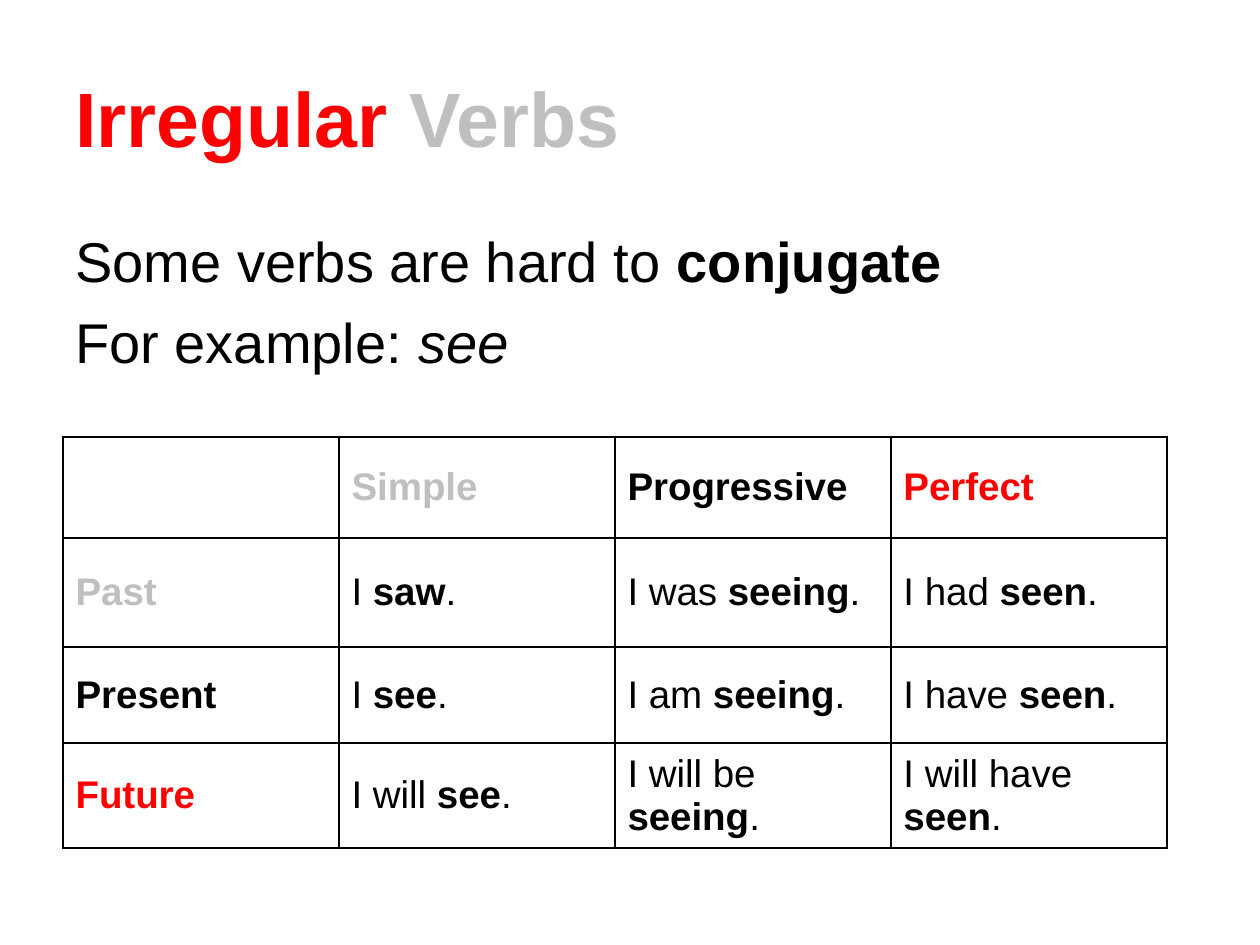
"""Build a slide on irregular verbs with a conjugation table for "see"."""
from lxml import etree
from pptx import Presentation
from pptx.dml.color import RGBColor
from pptx.enum.text import MSO_ANCHOR
from pptx.oxml.ns import qn
from pptx.util import Emu, Pt

PX = 914400 / 126
RED = RGBColor(0xFF, 0x00, 0x00)
GRAY = RGBColor(0xBF, 0xBF, 0xBF)
BLACK = RGBColor(0x00, 0x00, 0x00)


def px(*lengths):
    return [Emu(round(length * PX)) for length in lengths]


def write_runs(paragraph, size, runs):
    for text, color, bold, italic in runs:
        run = paragraph.add_run()
        run.text = text
        run.font.name = "Arial"
        run.font.size = Pt(size)
        run.font.color.rgb = color
        run.font.bold = bold
        run.font.italic = italic


presentation = Presentation()
presentation.slide_width, presentation.slide_height = px(1260, 945)
slide = presentation.slides.add_slide(presentation.slide_layouts[6])

title = slide.shapes.add_textbox(*px(63, 38, 1134, 158)).text_frame
title.word_wrap = True
title.vertical_anchor = MSO_ANCHOR.MIDDLE
write_runs(title.paragraphs[0], 44, [("Irregular ", RED, True, False), ("Verbs", GRAY, True, False)])

body = slide.shapes.add_textbox(*px(63, 220, 1134, 624)).text_frame
body.word_wrap = True
introduction = body.paragraphs[0]
introduction.space_before = Pt(3)
write_runs(introduction, 32, [("Some verbs are hard to ", BLACK, False, False), ("conjugate", BLACK, True, False)])
example = body.add_paragraph()
example.space_before = Pt(8)
write_runs(example, 32, [("For example: ", BLACK, False, False), ("see", BLACK, False, True)])

aspects = [("Simple", GRAY), ("Progressive", BLACK), ("Perfect", RED)]
tenses = [
    ("Past", GRAY, [("I ", "saw"), ("I was ", "seeing"), ("I had ", "seen")]),
    ("Present", BLACK, [("I ", "see"), ("I am ", "seeing"), ("I have ", "seen")]),
    ("Future", RED, [("I will ", "see"), ("I will be ", "seeing"), ("I will have ", "seen")]),
]
rows = [[[]] + [[(name, color, True, False)] for name, color in aspects]]
for name, color, forms in tenses:
    row = [[(name, color, True, False)]]
    for start, verb in forms:
        row.append([(start, BLACK, False, False), (verb, BLACK, True, False), (".", BLACK, False, False)])
    rows.append(row)

row_heights = px(101, 109, 96, 103)
table = slide.shapes.add_table(4, 4, *px(63, 437, 1105, 409)).table
table.first_row = False
table.horz_banding = False
for column in table.columns:
    column.width = px(276)[0]
for table_row, height, contents in zip(table.rows, row_heights, rows):
    table_row.height = height
    for cell, runs in zip(table_row.cells, contents):
        cell.vertical_anchor = MSO_ANCHOR.MIDDLE
        write_runs(cell.text_frame.paragraphs[0], 22, runs)
        properties = cell._tc.get_or_add_tcPr()
        for side in ("a:lnL", "a:lnR", "a:lnT", "a:lnB"):
            border = etree.SubElement(properties, qn(side), w=str(Pt(1)))
            fill = etree.SubElement(border, qn("a:solidFill"))
            etree.SubElement(fill, qn("a:srgbClr"), val=str(BLACK))
        cell.fill.background()

presentation.save("out.pptx")
